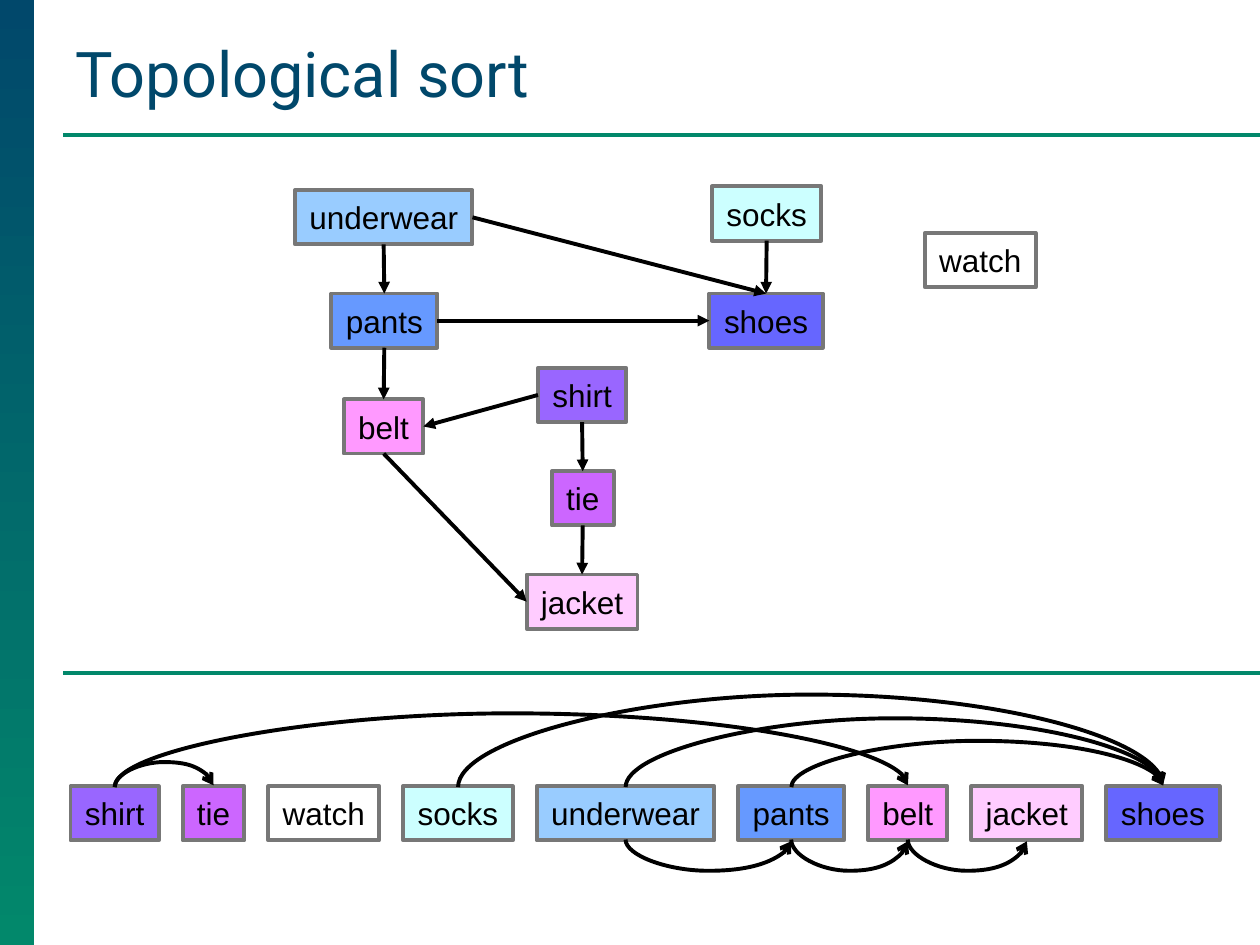
from pptx import Presentation
from pptx.util import Inches, Pt
from pptx.dml.color import RGBColor
from pptx.enum.shapes import MSO_SHAPE as Shape, MSO_CONNECTOR as Link
from pptx.enum.text import MSO_ANCHOR as Anchor, PP_ALIGN as Align
from pptx.oxml.ns import qn
from lxml.etree import SubElement

NAVY, GREEN, GRAY, BLACK = "01486B", "02886B", "777777", "000000"
TOP, LEFT, BOTTOM, RIGHT = range(4)

# Width and fill of each garment's box
ITEMS = {
    "underwear": (1.41, "99CCFF"), "pants": (0.84, "6699FF"),
    "belt": (0.63, "FF99FF"), "socks": (0.87, "CCFFFF"),
    "shoes": (0.9, "6666FF"), "shirt": (0.7, "9966FF"),
    "tie": (0.49, "CC66FF"), "jacket": (0.88, "FFCCFF"),
    "watch": (0.88, "FFFFFF"),
}
# Left and top of each box in the graph
GRAPH = {
    "underwear": (2.34, 1.51), "pants": (2.63, 2.33), "belt": (2.73, 3.17),
    "socks": (5.65, 1.48), "shoes": (5.63, 2.33), "shirt": (4.27, 2.92),
    "tie": (4.38, 3.74), "jacket": (4.18, 4.56), "watch": (7.34, 1.85),
}
EDGES = [
    ("underwear", RIGHT, "shoes", TOP), ("socks", BOTTOM, "shoes", TOP),
    ("underwear", BOTTOM, "pants", TOP), ("pants", BOTTOM, "belt", TOP),
    ("shirt", LEFT, "belt", RIGHT), ("shirt", BOTTOM, "tie", TOP),
    ("tie", BOTTOM, "jacket", TOP), ("belt", BOTTOM, "jacket", LEFT),
    ("pants", RIGHT, "shoes", LEFT),
]
ORDER = ["shirt", "tie", "watch", "socks", "underwear",
         "pants", "belt", "jacket", "shoes"]
# Height of each arc over the sorted row; negative arcs hang below it
ARCS = [
    ("socks", "shoes", 0.74), ("underwear", "pants", -0.25),
    ("underwear", "shoes", 0.55), ("pants", "shoes", 0.37),
    ("pants", "belt", -0.25), ("shirt", "tie", 0.2),
    ("shirt", "belt", 0.59), ("belt", "jacket", -0.25),
]


def color(code):
    return RGBColor.from_string(code)


def write(frame, text, size=18, font="Arial", ink=BLACK,
          align=Align.CENTER, anchor=Anchor.MIDDLE, wrap=False):
    frame.word_wrap = wrap
    frame.vertical_anchor = anchor
    frame.margin_left = frame.margin_right = Inches(0.1)
    frame.margin_top = frame.margin_bottom = Inches(0.05)
    para = frame.paragraphs[0]
    para.alignment = align
    run = para.add_run()
    run.text = text
    run.font.size = Pt(size)
    run.font.name = font
    run.font.color.rgb = color(ink)


class Board:
    weight = Pt(2.25)
    tall = 0.43

    def __init__(self, slide):
        self.shapes = slide.shapes

    def band(self, x, y, w, h, first, last):
        bar = self.shapes.add_shape(
            Shape.RECTANGLE, Inches(x), Inches(y), Inches(w), Inches(h))
        bar.shadow.inherit = False
        bar.line.fill.background()
        bar.fill.gradient()
        bar.fill.gradient_angle = 270
        for stop, code in zip(bar.fill.gradient_stops, (first, last)):
            stop.color.rgb = color(code)

    def title(self, text, x, y, w, h):
        area = self.shapes.add_textbox(
            Inches(x), Inches(y), Inches(w), Inches(h))
        write(area.text_frame, text, size=36, font="Roboto", ink=NAVY,
              align=Align.LEFT, anchor=Anchor.BOTTOM, wrap=True)

    def box(self, name, x, y):
        wide, fill = ITEMS[name]
        box = self.shapes.add_shape(
            Shape.RECTANGLE, Inches(x), Inches(y),
            Inches(wide), Inches(self.tall))
        box.shadow.inherit = False
        box.fill.solid()
        box.fill.fore_color.rgb = color(fill)
        box.line.color.rgb = color(GRAY)
        box.line.width = self.weight
        write(box.text_frame, name)
        return box

    def line(self, x1, y1, x2, y2, ink=BLACK, kind=Link.STRAIGHT, head=None):
        line = self.shapes.add_connector(
            kind, Inches(x1), Inches(y1), Inches(x2), Inches(y2))
        line.line.color.rgb = color(ink)
        line.line.width = self.weight
        if head:
            SubElement(line.line._get_or_add_ln(), qn("a:tailEnd"), type=head)
        SubElement(line._element.spPr, qn("a:effectLst"))
        return line

    def edge(self, start, side, end, goal):
        line = self.line(0, 0, 0, 0, head="triangle")
        line.begin_connect(start, side)
        line.end_connect(end, goal)

    def arc(self, start, end, rise):
        # A thin, tall connector turned a quarter; the bend scales its width
        x1, x2 = (box.left + box.width // 2 for box in (start, end))
        y = start.top if rise > 0 else start.top + start.height
        thin, span = Pt(1), x2 - x1
        arc = self.line(0, 0, 0, 0, kind=Link.CURVE, head="arrow")
        arc.left, arc.top = (x1 + x2 - thin) // 2, y - span // 2
        arc.width, arc.height = thin, span
        arc.rotation = 90 if rise > 0 else 270
        frame = arc._element.spPr.find(qn("a:xfrm"))
        frame.set("flipH", "1")
        if rise > 0:
            frame.set("flipV", "1")
        bend = round(Inches(abs(rise)) / thin * 100000)
        guides = arc._element.spPr.find(qn("a:prstGeom")).get_or_add_avLst()
        SubElement(guides, qn("a:gd"), name="adj1", fmla=f"val {bend}")


def main():
    deck = Presentation()
    deck.slide_width, deck.slide_height = Inches(10), Inches(7.5)
    board = Board(deck.slides.add_slide(deck.slide_layouts[6]))

    # Frame and title
    board.band(0, 0, 0.27, 7.5, NAVY, GREEN)
    board.title("Topological sort", 0.5, 0.21, 9.28, 0.71)
    for y in (1.07, 5.34):
        board.line(0.5, y, 10, y, ink=GREEN)

    # Dependency graph
    nodes = {name: board.box(name, *spot) for name, spot in GRAPH.items()}
    for start, side, end, goal in EDGES:
        board.edge(nodes[start], side, nodes[end], goal)

    # Sorted row, evenly spaced
    row, x, gap = {}, 0.56, 0.19
    for name in ORDER:
        row[name] = board.box(name, x, 6.24)
        x += ITEMS[name][0] + gap
    for start, end, rise in ARCS:
        board.arc(row[start], row[end], rise)

    deck.save("out.pptx")


if __name__ == "__main__":
    main()
